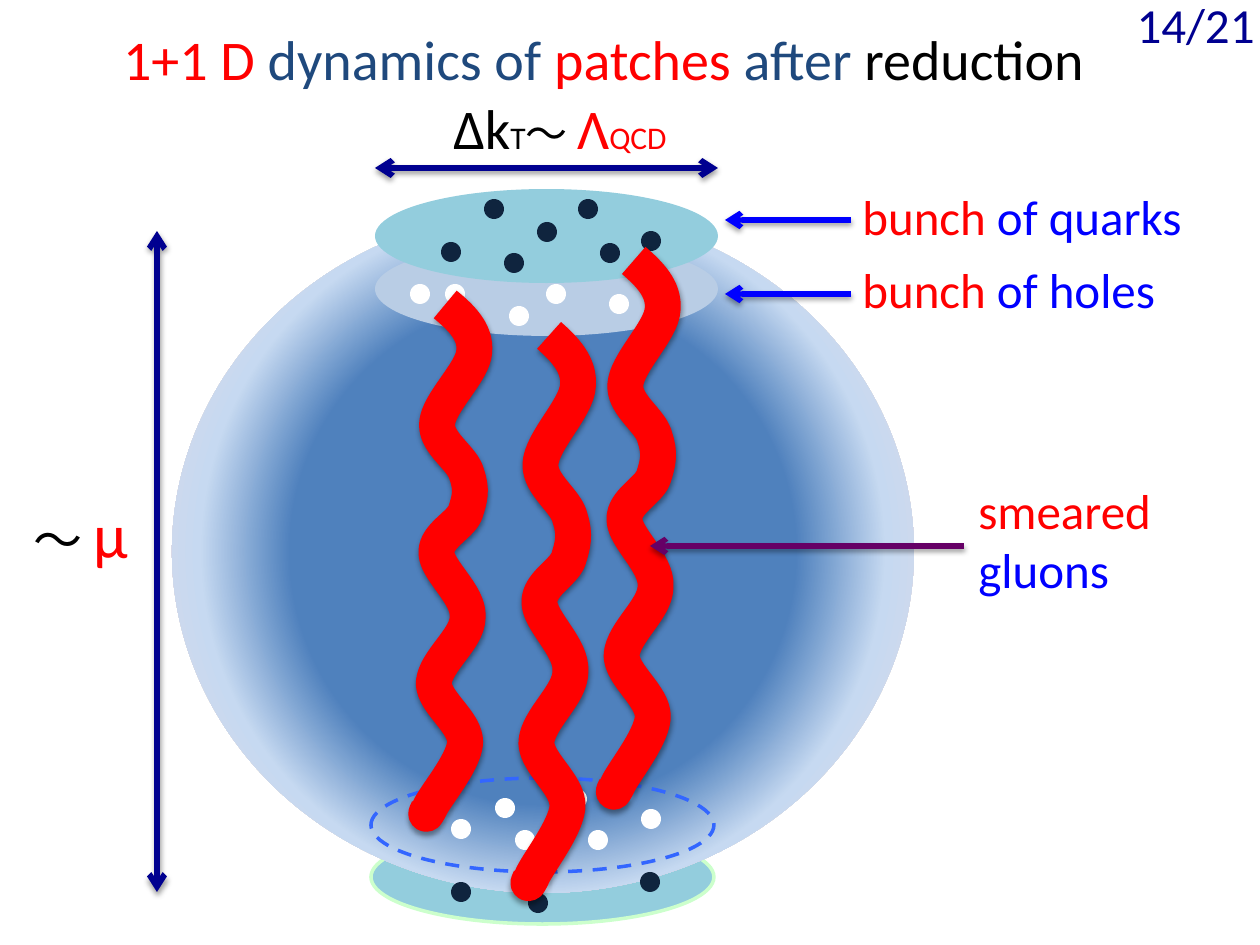
from lxml.etree import SubElement
from pptx import Presentation
from pptx.dml.color import RGBColor
from pptx.enum.dml import MSO_LINE
from pptx.enum.shapes import MSO_CONNECTOR, MSO_SHAPE
from pptx.enum.text import MSO_ANCHOR, PP_ALIGN
from pptx.oxml import parse_xml
from pptx.oxml.ns import nsdecls, qn
from pptx.util import Pt

PX = 914400 / 126
RED, BLUE, NAVY = RGBColor(255, 0, 0), RGBColor(0, 0, 255), RGBColor(0, 0, 0x90)
BLACK, WHITE = RGBColor(0, 0, 0), RGBColor(255, 255, 255)
TITLE_BLUE, PURPLE = RGBColor(0x1F, 0x49, 0x7D), RGBColor(0x66, 0, 0x66)
AQUA, PALE = RGBColor(0x93, 0xCD, 0xDD), RGBColor(0xB9, 0xCD, 0xE5)
MINT, DASH_BLUE = RGBColor(0xCC, 0xFF, 0xCC), RGBColor(0x33, 0x66, 0xFF)
DARK = RGBColor(0x0F, 0x24, 0x3E)

# Text: runs are (text, points, colour); boxes are left, top, width, height
TITLE_BOX = (63, 18, 1081, 81)
TITLE = [("1+1 D ", 32, RED), ("dynamics of ", 32, TITLE_BLUE), ("patches ", 32, RED),
         ("after", 32, TITLE_BLUE), (" reduction", 32, BLACK)]
LABELS = [
    ((1099, -12, 168, 72), PP_ALIGN.RIGHT, [("14/21", 28, NAVY)]),
    ((441, 87, 315, 81), PP_ALIGN.LEFT,
     [("Δk", 32, BLACK), ("T", 18, BLACK), ("〜 ", 24, BLACK), ("Λ", 32, RED), ("QCD", 18, RED)]),
    ((21, 489, 149, 89), PP_ALIGN.LEFT, [("〜 ", 28, BLACK), ("μ", 36, RED)]),
    ((850, 180, 374, 72), PP_ALIGN.LEFT, [("bunch", 28, RED), (" of quarks", 28, BLUE)]),
    ((850, 253, 374, 72), PP_ALIGN.LEFT, [("bunch ", 28, RED), ("of holes", 28, BLUE)]),
    ((966, 474, 273, 131), PP_ALIGN.LEFT, [("smeared", 28, RED), (" gluons", 28, BLUE)]),
]

# Ellipses from back to front: box, fill, outline, dash
SPHERE_BOX = (172, 210, 742, 683)
SPHERE_STOPS = [(50, "4F81BD"), (68, "C6D9F1"), (100, "F2DCDB")]
BOTTOM_QUARKS = ((371, 830, 343, 94), AQUA, MINT, None)
PATCHES = [
    ((375, 242, 343, 94), PALE, None, None),
    ((371, 778, 343, 94), None, DASH_BLUE, MSO_LINE.DASH),
    ((375, 189, 343, 94), AQUA, None, None),
]
DOT = 20
QUARKS = [(578, 199), (537, 222), (528, 893), (600, 243), (441, 242),
          (484, 199), (504, 253), (641, 231), (640, 872), (451, 882)]
HOLES = [(445, 284), (609, 294), (509, 306), (546, 284), (567, 789), (588, 830),
         (451, 819), (495, 798), (515, 830), (641, 809), (420, 799), (410, 284)]

# Gluons: one wave, three points to each cubic curve, stretched in height
WAVE = [(16, 13), (32, 28), (31, 49), (31, 71), (-3, 106), (-3, 129),
        (-3, 150), (25, 165), (29, 182), (35, 198), (33, 208), (29, 223),
        (24, 237), (1, 249), (2, 267), (3, 286), (37, 311), (36, 335),
        (37, 358), (6, 383), (5, 407), (6, 428), (39, 448), (39, 470),
        (38, 493), (10, 530), (6, 543), (0, 555), (5, 543), (5, 543)]
GLUONS = [(434, 305, 0.93), (622, 261, 0.97), (537, 336, 1)]  # start x, y, stretch

# Arrows: start, end, colour, points, both ends
ARROWS = [
    ((375, 168), (718, 168), NAVY, 3.25, True),
    ((157, 231), (157, 892), NAVY, 3.25, True),
    ((851, 220), (725, 220), BLUE, 3, False),
    ((851, 294), (725, 294), BLUE, 3, False),
    ((964, 546), (650, 546), PURPLE, 3, False),
]


def emu(*lengths):
    return [round(length * PX) for length in lengths]


def write(frame, runs, align):
    for name, value in {"word_wrap": True, "vertical_anchor": MSO_ANCHOR.TOP}.items():
        setattr(frame, name, value)
    paragraph = frame.paragraphs[0]
    paragraph.alignment = align
    for text, size, color in runs:
        run = paragraph.add_run()
        run.text = text
        for name, value in {"name": "Calibri", "size": Pt(size)}.items():
            setattr(run.font, name, value)
        run.font.color.rgb = color


def add_ellipse(box, fill, outline=None, dash=None):
    ellipse = slide.shapes.add_shape(MSO_SHAPE.OVAL, *emu(*box))
    ellipse.shadow.inherit = False
    if fill is None:
        ellipse.fill.background()
    else:
        ellipse.fill.solid()
        ellipse.fill.fore_color.rgb = fill
    if outline is None:
        ellipse.line.fill.background()
    else:
        ellipse.line.color.rgb = outline
        ellipse.line.width = Pt(2)
        ellipse.line.dash_style = dash
    return ellipse


def add_shadow(part):
    part._element.spPr.append(parse_xml(
        f'<a:effectLst {nsdecls("a")}><a:outerShdw blurRad="39370" dist="20320" dir="5400000" '
        'rotWithShape="0"><a:srgbClr val="000000"><a:alpha val="38000"/></a:srgbClr>'
        '</a:outerShdw></a:effectLst>'))


def bend(freeform):
    """Join every three line segments into one cubic curve."""
    segments = list(freeform._element.spPr.iter(qn("a:lnTo")))
    outline = segments[0].getparent()
    for i in range(0, len(segments), 3):
        curve = SubElement(outline, qn("a:cubicBezTo"))
        for segment in segments[i:i + 3]:
            curve.append(segment[0])
            outline.remove(segment)


prs = Presentation()
prs.slide_width, prs.slide_height = emu(1260, 945)
slide = prs.slides.add_slide(prs.slide_layouts[5])

# Title
title = slide.shapes.title
for side, length in zip(("left", "top", "width", "height"), emu(*TITLE_BOX)):
    setattr(title, side, length)
write(title.text_frame, TITLE, PP_ALIGN.CENTER)

# Sphere and patches
add_ellipse(*BOTTOM_QUARKS)
sphere = add_ellipse(SPHERE_BOX, PALE)
stops = "".join(f'<a:gs pos="{at * 1000}"><a:srgbClr val="{color}"/></a:gs>'
                for at, color in SPHERE_STOPS)
sphere_pr = sphere._element.spPr
sphere_pr.replace(sphere_pr.find(qn("a:solidFill")), parse_xml(
    f'<a:gradFill {nsdecls("a")} rotWithShape="1"><a:gsLst>{stops}</a:gsLst><a:path path="circle">'
    '<a:fillToRect l="50000" t="50000" r="50000" b="50000"/></a:path></a:gradFill>'))
for patch in PATCHES:
    add_ellipse(*patch)

# Quarks and holes
for dots, color in ((QUARKS, DARK), (HOLES, WHITE)):
    for x, y in dots:
        add_ellipse((x, y, DOT, DOT), color)

# Labels
for box, align, runs in LABELS:
    write(slide.shapes.add_textbox(*emu(*box)).text_frame, runs, align)

# Gluons
for x, y, stretch in GLUONS:
    builder = slide.shapes.build_freeform(*emu(x, y))
    builder.add_line_segments([emu(x + dx, y + dy * stretch) for dx, dy in WAVE], close=False)
    gluon = builder.convert_to_shape()
    bend(gluon)
    gluon.rotation = 2.5
    gluon.fill.background()
    gluon.line.color.rgb = RED
    gluon.line.width = Pt(20.5)
    add_shadow(gluon)

# Arrows
for start, end, color, width, both_ends in ARROWS:
    arrow = slide.shapes.add_connector(MSO_CONNECTOR.STRAIGHT, *emu(*start, *end))
    arrow.line.color.rgb = color
    arrow.line.width = Pt(width)
    for tip in ("headEnd", "tailEnd") if both_ends else ("tailEnd",):
        arrow.line._get_or_add_ln().append(parse_xml(f'<a:{tip} {nsdecls("a")} type="arrow"/>'))
    add_shadow(arrow)

prs.save("out.pptx")
